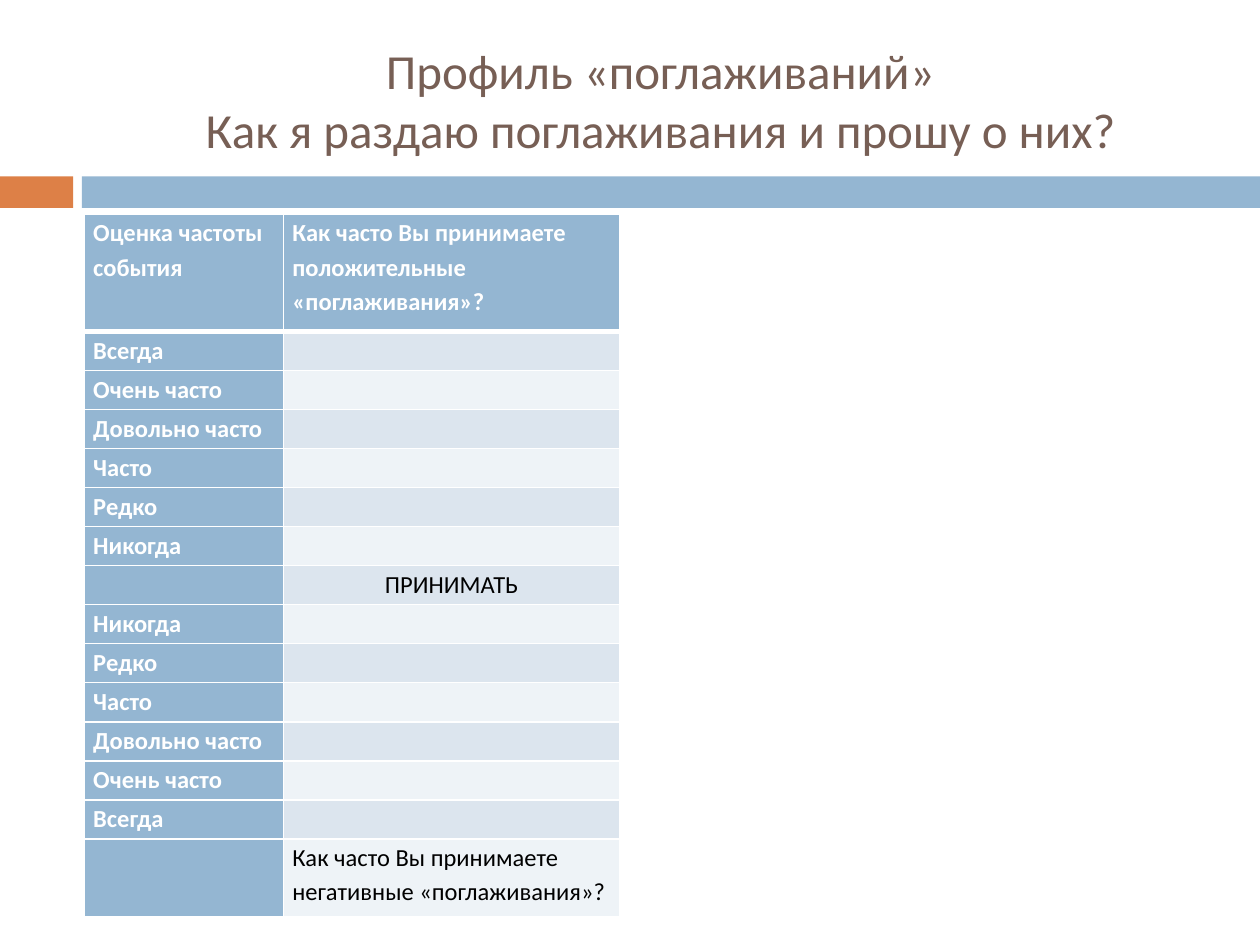
from dataclasses import dataclass

from lxml import etree
from pptx import Presentation
from pptx.dml.color import RGBColor
from pptx.enum.shapes import MSO_SHAPE
from pptx.enum.text import MSO_ANCHOR, MSO_AUTO_SIZE, PP_ALIGN
from pptx.oxml.ns import qn
from pptx.util import Inches, Pt

RECTANGLE = MSO_SHAPE.RECTANGLE
MIDDLE = MSO_ANCHOR.MIDDLE
NO_AUTOFIT = MSO_AUTO_SIZE.NONE
LEFT, CENTER = PP_ALIGN.LEFT, PP_ALIGN.CENTER

FONT = "Calibri"
WHITE, BLACK, BROWN = "FFFFFF", "000000", "775F55"
BLUE, ORANGE = "94B6D2", "DD8047"
BANDS = ("EEF3F7", "DCE5EE")
FREQUENCIES = ["Всегда", "Очень часто", "Довольно часто", "Часто", "Редко", "Никогда"]


@dataclass
class Bar:
    left: float
    width: float
    color: str


@dataclass
class Row:
    label: str
    answer: str = ""
    height: float = 0.31
    align: PP_ALIGN = LEFT


BARS = [Bar(0, 0.58, ORANGE), Bar(0.65, 9.35, BLUE)]
COLUMN_WIDTHS = [1.58, 2.67]
ROWS = [
    Row("Оценка частоты события", "Как часто Вы принимаете положительные «поглаживания»?", 0.93),
    *[Row(label) for label in FREQUENCIES],
    Row("", "ПРИНИМАТЬ", align=CENTER),
    *[Row(label) for label in reversed(FREQUENCIES)],
    Row("", "Как часто Вы принимаете негативные «поглаживания»?", 0.62),
]


def rgb(color: str) -> RGBColor:
    return RGBColor.from_string(color)


def write(frame, text: str, *, size: float, color: str, bold: bool = False,
          align: PP_ALIGN = LEFT, spacing: float = 1.0) -> None:
    paragraph = frame.paragraphs[0]
    paragraph.text = text
    paragraph.alignment = align
    paragraph.line_spacing = spacing
    for run in paragraph.runs:
        run.font.name = FONT
        run.font.size = Pt(size)
        run.font.bold = bold
        run.font.color.rgb = rgb(color)


def draw_bar(slide, bar: Bar) -> None:
    strip = slide.shapes.add_shape(
        RECTANGLE, Inches(bar.left), Inches(1.4), Inches(bar.width), Inches(0.25))
    strip.shadow.inherit = False
    strip.fill.solid()
    strip.fill.fore_color.rgb = rgb(bar.color)
    strip.line.fill.background()


def set_borders(cell, top: float, bottom: float) -> None:
    properties = cell._tc.get_or_add_tcPr()
    for side, width in (("L", 1), ("R", 1), ("T", top), ("B", bottom)):
        line = etree.SubElement(properties, qn(f"a:ln{side}"), w=str(Pt(width)))
        fill = etree.SubElement(line, qn("a:solidFill"))
        etree.SubElement(fill, qn("a:srgbClr"), val=WHITE)


def draw_cell(cell, text: str, fill: str, color: str, bold: bool,
              align: PP_ALIGN, top: float, bottom: float) -> None:
    cell.margin_left = cell.margin_right = Inches(0.07)
    cell.margin_top = cell.margin_bottom = 0
    set_borders(cell, top, bottom)
    cell.fill.solid()
    cell.fill.fore_color.rgb = rgb(fill)
    if text:
        write(cell.text_frame, text, size=14, color=color, bold=bold,
              align=align, spacing=1.15)


def draw_profile(slide, rows: list[Row]) -> None:
    profile = slide.shapes.add_table(
        len(rows), len(COLUMN_WIDTHS), Inches(0.67), Inches(1.7),
        Inches(sum(COLUMN_WIDTHS)), Inches(sum(row.height for row in rows))).table
    for column, width in zip(profile.columns, COLUMN_WIDTHS):
        column.width = Inches(width)
    for index, row in enumerate(rows):
        profile.rows[index].height = Inches(row.height)
        header = index == 0
        top, bottom = 3 if index == 1 else 1, 3 if header else 1
        draw_cell(profile.cell(index, 0), row.label, BLUE, WHITE, True, LEFT, top, bottom)
        draw_cell(profile.cell(index, 1), row.answer,
                  BLUE if header else BANDS[index % 2],
                  WHITE if header else BLACK, header, row.align, top, bottom)


def main() -> None:
    deck = Presentation()
    deck.slide_width, deck.slide_height = Inches(10), Inches(7.5)
    slide = deck.slides.add_slide(deck.slide_layouts[5])
    for bar in BARS:
        draw_bar(slide, bar)

    heading = slide.shapes.title
    heading.left, heading.top = Inches(0.67), Inches(0.25)
    heading.width, heading.height = Inches(9.14), Inches(1.08)
    heading.text_frame.auto_size = NO_AUTOFIT
    heading.text_frame.vertical_anchor = MIDDLE
    write(heading.text_frame, "Профиль «поглаживаний»\nКак я раздаю поглаживания и прошу о них?",
          size=28, color=BROWN, align=CENTER)

    draw_profile(slide, ROWS)
    deck.save("out.pptx")


if __name__ == "__main__":
    main()
